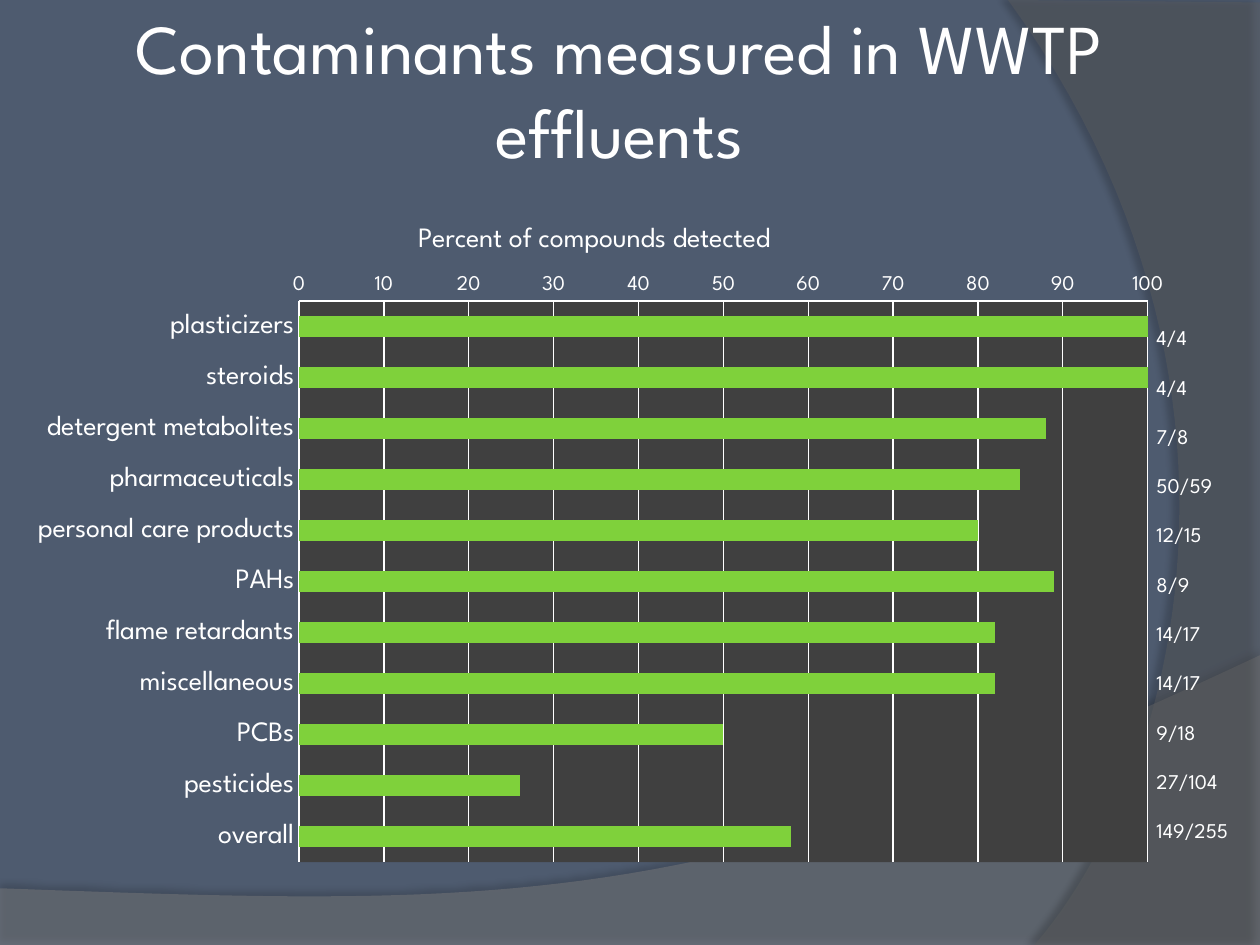
from lxml import etree
from pptx import Presentation
from pptx.chart.data import CategoryChartData
from pptx.dml.color import RGBColor
from pptx.enum.chart import XL_CHART_TYPE, XL_TICK_LABEL_POSITION, XL_TICK_MARK
from pptx.enum.text import MSO_ANCHOR, MSO_AUTO_SIZE, PP_ALIGN
from pptx.oxml import parse_xml
from pptx.oxml.ns import nsdecls, qn
from pptx.util import Inches, Pt

BAR_CLUSTERED = XL_CHART_TYPE.BAR_CLUSTERED
NO_TICK = XL_TICK_MARK.NONE
NEXT_TO_AXIS = XL_TICK_LABEL_POSITION.NEXT_TO_AXIS
MIDDLE, CENTER, LEFT = MSO_ANCHOR.MIDDLE, PP_ALIGN.CENTER, PP_ALIGN.LEFT
FIT_SHAPE, NO_FIT = MSO_AUTO_SIZE.SHAPE_TO_FIT_TEXT, MSO_AUTO_SIZE.NONE

SLATE = RGBColor(0x4E, 0x5B, 0x6F)
LIGHT_GRAY = RGBColor(0x7F, 0x7F, 0x7F)
MID_GRAY = RGBColor(0x5E, 0x5E, 0x5E)
DARK_GRAY = RGBColor(0x40, 0x40, 0x40)
GREEN = RGBColor(0x7F, 0xD1, 0x3B)
WHITE = RGBColor(0xFF, 0xFF, 0xFF)

# Contaminant group, percent detected, detected / measured
RESULTS = [
    ("plasticizers", 100, "4/4"),
    ("steroids", 100, "4/4"),
    ("detergent metabolites", 88, "7/8"),
    ("pharmaceuticals", 85, "50/59"),
    ("personal care products", 80, "12/15"),
    ("PAHs", 89, "8/9"),
    ("flame retardants", 82, "14/17"),
    ("miscellaneous", 82, "14/17"),
    ("PCBs", 50, "9/18"),
    ("pesticides", 26, "27/104"),
    ("overall", 58, "149/255"),
]


def bezier(start, control1, control2, end, steps=48):
    """Points along a cubic curve, without its start."""
    points = []
    for step in range(1, steps + 1):
        t = step / steps
        weights = ((1 - t) ** 3, 3 * t * (1 - t) ** 2, 3 * t * t * (1 - t), t ** 3)
        corners = (start, control1, control2, end)
        points.append(tuple(sum(w * c[axis] for w, c in zip(weights, corners))
                            for axis in (0, 1)))
    return points


class SlideBuilder:
    def __init__(self, slide, font="League Spartan", color=WHITE):
        self.slide, self.font, self.color = slide, font, color

    def style(self, font, size):
        font.name, font.size, font.bold = self.font, Pt(size), False
        font.color.rgb = self.color

    def text(self, text, left, top, width, height, size, align=LEFT,
             anchor=None, margin=None, wrap=False):
        box = self.slide.shapes.add_textbox(
            Inches(left), Inches(top), Inches(width), Inches(height))
        frame = box.text_frame
        frame.text = text
        frame.word_wrap = wrap
        frame.auto_size = NO_FIT if wrap else FIT_SHAPE
        if anchor is not None:
            frame.vertical_anchor = anchor
        if margin is not None:
            frame.margin_left = frame.margin_right = Inches(margin)
            frame.margin_top = frame.margin_bottom = Inches(margin)
        paragraph = frame.paragraphs[0]
        paragraph.alignment = align
        self.style(paragraph.runs[0].font, size)

    def wave(self, points, color, alpha, shadow_alpha, distance, direction):
        # The builder rounds to whole units, so points are given in EMU
        corners = [(Inches(x), Inches(y)) for x, y in points]
        builder = self.slide.shapes.build_freeform(*corners[0])
        builder.add_line_segments(corners[1:], close=True)
        shape = builder.convert_to_shape()
        shape.fill.solid()
        shape.fill.fore_color.rgb = color
        shape.line.fill.background()
        fill_color = shape._element.spPr.find(qn("a:solidFill"))[0]
        etree.SubElement(fill_color, qn("a:alpha")).set("val", str(alpha * 1000))
        shape._element.spPr.append(parse_xml(
            f'<a:effectLst {nsdecls("a")}><a:outerShdw blurRad="{Pt(4)}" '
            f'dist="{Pt(distance)}" dir="{direction * 60000}" rotWithShape="0">'
            f'<a:srgbClr val="000000"><a:alpha val="{shadow_alpha * 1000}"/>'
            '</a:srgbClr></a:outerShdw></a:effectLst>'))

    def layout(self, parent, before, **values):
        """Place a chart part by fractions of the chart area."""
        for old in parent.findall(qn("c:layout")):
            parent.remove(old)
        target = '<c:layoutTarget val="inner"/>' if "w" in values else ""
        modes = '<c:xMode val="edge"/><c:yMode val="edge"/>'
        sizes = "".join(f'<c:{key} val="{value}"/>' for key, value in values.items())
        layout = parse_xml(f'<c:layout {nsdecls("c")}><c:manualLayout>{target}'
                           f'{modes}{sizes}</c:manualLayout></c:layout>')
        parent.find(qn(before)).addprevious(layout)

    def bar_chart(self, title, categories, values, left, top, width, height):
        data = CategoryChartData(number_format="0")
        data.categories = categories
        data.add_series("Series 1", values)
        chart = self.slide.shapes.add_chart(
            BAR_CLUSTERED, Inches(left), Inches(top), Inches(width),
            Inches(height), data).chart
        self.style(chart.font, 10)
        chart.has_legend = False

        # Title
        chart.has_title = True
        frame = chart.chart_title.text_frame
        frame.text = title
        self.style(frame.paragraphs[0].runs[0].font, 16)
        chart.chart_title.include_in_layout = False
        self.layout(chart.chart_title._element, "c:overlay", x=0.348, y=0.03)

        # Bars
        plot = chart.plots[0]
        plot.gap_width = 145
        plot.vary_by_categories = False
        bars = plot.series[0].format.fill
        bars.solid()
        bars.fore_color.rgb = GREEN

        # Axes
        for axis, size in ((chart.category_axis, 16), (chart.value_axis, 12)):
            axis.major_tick_mark = axis.minor_tick_mark = NO_TICK
            axis.tick_label_position = NEXT_TO_AXIS
            self.style(axis.tick_labels.font, size)
            axis.format.line.color.rgb = WHITE
            axis.format.line.width = Pt(0.75)
        chart.category_axis.reverse_order = True
        chart.category_axis.tick_labels.offset = 200
        value_axis = chart.value_axis
        value_axis.minimum_scale, value_axis.maximum_scale = 0, 100
        value_axis.major_unit = 10
        value_axis.tick_labels.number_format = "0"
        value_axis.tick_labels.number_format_is_linked = False
        value_axis.has_major_gridlines = True
        value_axis.major_gridlines.format.line.color.rgb = WHITE
        value_axis.major_gridlines.format.line.width = Pt(0.75)

        # Plot area
        plot_area = chart._chartSpace.chart.plotArea
        self.layout(plot_area, "c:barChart", x=0.252, y=0.151, w=0.715, h=0.829)
        plot_area.append(parse_xml(
            f'<c:spPr {nsdecls("c", "a")}><a:solidFill><a:srgbClr '
            f'val="{DARK_GRAY}"/></a:solidFill><a:ln><a:noFill/></a:ln></c:spPr>'))


def main():
    presentation = Presentation()
    presentation.slide_width, presentation.slide_height = Inches(10), Inches(7.5)
    slide = presentation.slides.add_slide(presentation.slide_layouts[6])
    slide.background.fill.solid()
    slide.background.fill.fore_color.rgb = SLATE
    builder = SlideBuilder(slide)

    # Background waves
    bottom_curve = bezier((10, 5.2), (5.59, 7.29), (3.91, 7.19), (0, 7.05))
    builder.wave([(0, 7.05), (0, 7.51), (10, 7.51), (10, 5.2)] + bottom_curve[:-1],
                 LIGHT_GRAY, 45, 35, 3.5, 270)
    right_curve = bezier((8.21, 7.5), (9.35, 6.19), (10.18, 3), (8, 0))
    builder.wave([(10, 0.02), (10, 7.5), (8.21, 7.5)] + right_curve,
                 MID_GRAY, 40, 45, 4, 180)

    # Title
    builder.text("Contaminants measured in WWTP effluents", 0.5, 0.08, 8.83, 1.25,
                 40, align=CENTER, anchor=MIDDLE, margin=0.05, wrap=True)

    # Chart
    groups, percents, counts = zip(*RESULTS)
    builder.bar_chart("Percent of compounds detected", groups, percents,
                      0, 1.58, 9.42, 5.37)

    # Counts beside the bars, each box wide enough for its text
    row_pitch = (6.44 - 2.53) / (len(counts) - 1)
    for row, count in enumerate(counts):
        builder.text(count, 9.08, 2.53 + row * row_pitch,
                     0.2 + 0.09 * len(count), 0.3, 12)

    presentation.save("out.pptx")


if __name__ == "__main__":
    main()
